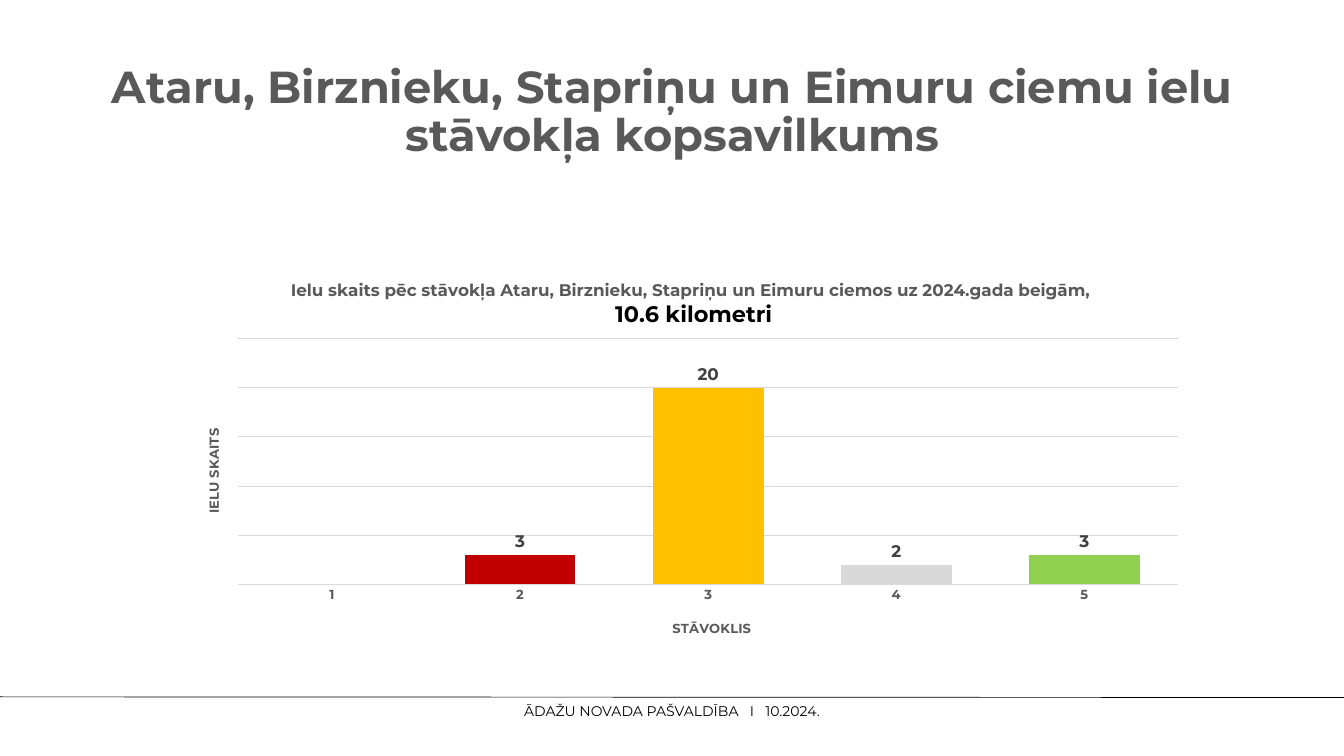
from dataclasses import dataclass

import lxml.etree
import pptx
import pptx.chart.data
import pptx.dml.color
import pptx.enum.chart
import pptx.enum.shapes
import pptx.enum.text
import pptx.oxml.ns
import pptx.util

qn = pptx.oxml.ns.qn


@dataclass(frozen=True)
class Theme:
    font: str = "Montserrat"
    grey: str = "595959"
    dark: str = "404040"
    black: str = "000000"
    grid: str = "D9D9D9"
    title: float = 48
    subtitle: float = 24
    label: float = 18
    axis: float = 14
    footer: float = 15
    rule: float = 0.75


@dataclass(frozen=True)
class Box:
    col: float
    row: float
    cols: float
    rows: float


@dataclass(frozen=True)
class Condition:
    grade: str
    streets: int | None
    color: str | None


THEME = Theme()
WIDTH, HEIGHT = pptx.util.Inches(20), pptx.util.Inches(11.25)
COLS, ROWS = 200, 112.5

TITLE_BOX = Box(13.8, 6, 172.5, 21.7)
CHART_BOX = Box(27.1, 39.6, 151.3, 56.7)
FOOTER_BOX = Box(1, 104.6, 198, 2.5)
CONDITIONS = [
    Condition("1", None, None),
    Condition("2", 3, "C00000"),
    Condition("3", 20, "FFC000"),
    Condition("4", 2, "D9D9D9"),
    Condition("5", 3, "92D050"),
]


def x(cols: float) -> int:
    return round(WIDTH * cols / COLS)


def y(rows: float) -> int:
    return round(HEIGHT * rows / ROWS)


def place(box: Box) -> tuple[int, int, int, int]:
    return x(box.col), y(box.row), x(box.cols), y(box.rows)


def rgb(color: str) -> pptx.dml.color.RGBColor:
    return pptx.dml.color.RGBColor.from_string(color)


def style(font, size: float, color: str, bold: bool = True) -> None:
    font.name = THEME.font
    font.size = pptx.util.Pt(size)
    font.bold = bold
    font.color.rgb = rgb(color)


def add_text(slide, box: Box):
    tf = slide.shapes.add_textbox(*place(box)).text_frame
    tf.word_wrap = True
    p = tf.paragraphs[0]
    p.alignment = pptx.enum.text.PP_ALIGN.CENTER
    return tf, p


def add_title(slide) -> None:
    tf, p = add_text(slide, TITLE_BOX)
    tf.vertical_anchor = pptx.enum.text.MSO_ANCHOR.MIDDLE
    p.text = "Ataru, Birznieku, Stapriņu un Eimuru ciemu ielu stāvokļa kopsavilkums"
    p.line_spacing = 0.9
    style(p.runs[0].font, THEME.title, THEME.grey)


def add_footer(slide) -> None:
    line = slide.shapes.add_connector(
        pptx.enum.shapes.MSO_CONNECTOR.STRAIGHT, 0, y(103.7), WIDTH, y(103.8))
    line.line.color.rgb = rgb(THEME.black)
    line.line.width = pptx.util.Pt(THEME.rule)
    lxml.etree.SubElement(line.element.spPr, qn("a:effectLst"))

    tf, p = add_text(slide, FOOTER_BOX)
    tf.margin_left = tf.margin_right = tf.margin_top = tf.margin_bottom = 0
    p.line_spacing = pptx.util.Pt(18)
    for text in ("ĀDAŽU NOVADA PAŠVALDĪBA", " ", "I", " ", "10.2024."):
        r = p.add_run()
        r.text = text
        style(r.font, THEME.footer, THEME.black, bold=False)
        if text == " ":
            r.font._element.set("spc", "800")


def set_layout(parent, index: int, **shares: float) -> None:
    for old in parent.findall(qn("c:layout")):
        parent.remove(old)
    layout = lxml.etree.Element(qn("c:layout"))
    manual = lxml.etree.SubElement(layout, qn("c:manualLayout"))
    if "w" in shares:
        lxml.etree.SubElement(manual, qn("c:layoutTarget")).set("val", "inner")
    for name in ("x", "y"):
        lxml.etree.SubElement(manual, qn(f"c:{name}Mode")).set("val", "edge")
    for name, share in shares.items():
        lxml.etree.SubElement(manual, qn(f"c:{name}")).set("val", str(share))
    parent.insert(index, layout)


def add_axis_title(axis, text: str, left: float, top: float) -> None:
    title = axis.axis_title
    title.text_frame.text = text
    style(title.text_frame.paragraphs[0].runs[0].font, THEME.axis, THEME.grey)
    set_layout(title.element, 1, x=left, y=top)


def add_chart_title(chart) -> None:
    tf = chart.chart_title.text_frame
    lines = [
        ("Ielu skaits pēc stāvokļa Ataru, Birznieku, Stapriņu un Eimuru ciemos"
         " uz 2024.gada beigām,", THEME.label, THEME.grey),
        (" 10.6 kilometri", THEME.subtitle, THEME.black),
    ]
    tf.text = "\n".join(text for text, _, _ in lines)
    for p, (_, size, color) in zip(tf.paragraphs, lines):
        p.alignment = pptx.enum.text.PP_ALIGN.CENTER
        style(p.runs[0].font, size, color)


def add_street_chart(slide) -> None:
    data = pptx.chart.data.CategoryChartData()
    data.categories = [c.grade for c in CONDITIONS]
    data.add_series("Series 1", [c.streets for c in CONDITIONS])
    chart = slide.shapes.add_chart(
        pptx.enum.chart.XL_CHART_TYPE.COLUMN_CLUSTERED,
        *place(CHART_BOX), data).chart
    chart.has_legend = False
    style(chart.font, THEME.axis, THEME.grey)
    add_chart_title(chart)

    tick = pptx.enum.chart.XL_TICK_MARK.NONE
    cat = chart.category_axis
    cat.major_tick_mark = cat.minor_tick_mark = tick
    cat.format.line.fill.background()
    style(cat.tick_labels.font, THEME.axis, THEME.grey)
    add_axis_title(cat, "STĀVOKLIS", 0.48, 0.92)

    val = chart.value_axis
    val.minimum_scale, val.maximum_scale, val.major_unit = 0, 25, 5
    val.major_gridlines.format.line.color.rgb = rgb(THEME.grid)
    val.major_gridlines.format.line.width = pptx.util.Pt(THEME.rule)
    add_axis_title(val, "IELU SKAITS", 0.02, 0.42)
    val.axis_title.element.find(".//" + qn("a:bodyPr")).set("rot", "-5400000")
    val.visible = False

    plot = chart.plots[0]
    plot.gap_width = 70
    plot.vary_by_categories = False
    series = plot.series[0]
    series.format.fill.solid()
    series.format.fill.fore_color.rgb = rgb("4472C4")
    for i, condition in enumerate(CONDITIONS):
        if condition.color:
            fill = series.points[i].format.fill
            fill.solid()
            fill.fore_color.rgb = rgb(condition.color)
    labels = series.data_labels
    labels.show_value = True
    labels.position = pptx.enum.chart.XL_LABEL_POSITION.OUTSIDE_END
    style(labels.font, THEME.label, THEME.dark)
    set_layout(chart.element.find(".//" + qn("c:plotArea")), 0,
               x=0.055, y=0.19, w=0.925, h=0.645)


def main() -> None:
    prs = pptx.Presentation()
    prs.slide_width, prs.slide_height = WIDTH, HEIGHT
    slide = prs.slides.add_slide(prs.slide_layouts[6])
    add_title(slide)
    add_street_chart(slide)
    add_footer(slide)
    prs.save("out.pptx")


if __name__ == "__main__":
    main()
